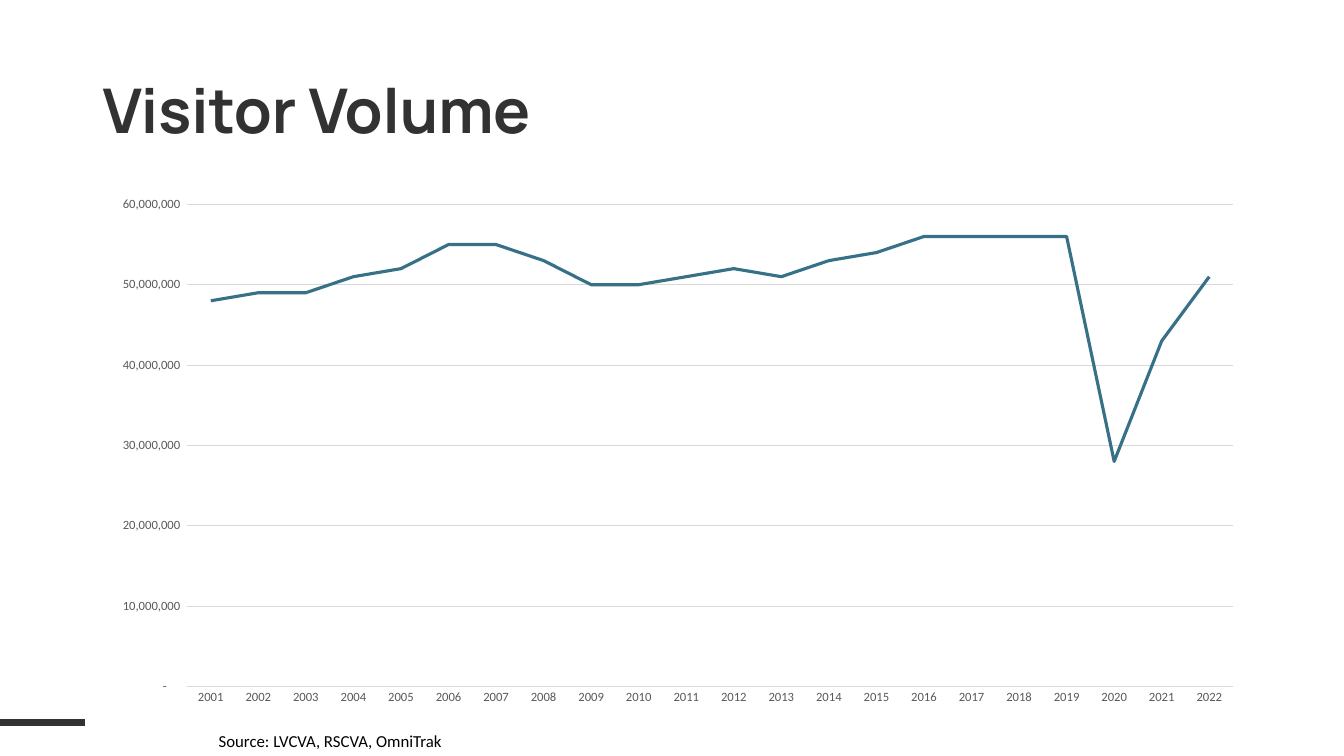
from lxml.etree import SubElement
from pptx import Presentation
from pptx.chart.data import CategoryChartData
from pptx.dml.color import RGBColor
from pptx.enum.chart import XL_CHART_TYPE as ChartType, XL_TICK_MARK as TickMark
from pptx.enum.shapes import MSO_CONNECTOR as Connector
from pptx.enum.text import MSO_ANCHOR as Anchor, MSO_AUTO_SIZE as AutoSize
from pptx.oxml.ns import qn
from pptx.util import Inches, Pt

CHARCOAL = RGBColor(0x32, 0x32, 0x32)
BLACK = RGBColor(0x00, 0x00, 0x00)
AXIS_GREY = RGBColor(0x59, 0x59, 0x59)
GRID_GREY = RGBColor(0xD9, 0xD9, 0xD9)
TEAL = RGBColor(0x37, 0x71, 0x87)

YEARS = range(2001, 2023)
VISITOR_MILLIONS = [48, 49, 49, 51, 52, 55, 55, 53, 50, 50, 51,
                    52, 51, 53, 54, 56, 56, 56, 56, 28, 43, 51]
COUNT_FORMAT = r'_(* #,##0_);_(* \(#,##0\);_(* "-"??_);_('


def style_font(font, name, size, color, bold=False):
    font.name = name
    font.size = Pt(size)
    font.color.rgb = color
    font.bold = bold


def style_line(line, color, width):
    line.color.rgb = color
    line.width = Pt(width)


def add_text(slide, text, left, top, width, height):
    box = slide.shapes.add_textbox(
        Inches(left), Inches(top), Inches(width), Inches(height))
    box.text_frame.text = text
    return box.text_frame, box.text_frame.paragraphs[0]


def add_title(slide):
    frame, title = add_text(slide, "Visitor Volume", 0.92, 0.4, 11.5, 1.45)
    frame.word_wrap = True
    frame.vertical_anchor = Anchor.MIDDLE
    title.line_spacing = 0.9
    title.space_after = Pt(6)
    style_font(title.font, "Manrope", 44, CHARCOAL, bold=True)


def add_source(slide):
    frame, source = add_text(
        slide, "Source: LVCVA, RSCVA, OmniTrak", 2.07, 7.2, 2.44, 0.3)
    frame.word_wrap = False
    frame.auto_size = AutoSize.SHAPE_TO_FIT_TEXT
    style_font(source.font, "Calibri", 12, BLACK)


def add_accent(slide):
    accent = slide.shapes.add_connector(
        Connector.STRAIGHT, Inches(-0.01), Inches(7.17), Inches(0.84), Inches(7.17))
    style_line(accent.line, CHARCOAL, 5)
    SubElement(accent.element.spPr, qn("a:effectLst"))


def style_axis(axis):
    axis.major_tick_mark = TickMark.NONE
    axis.minor_tick_mark = TickMark.NONE
    style_font(axis.tick_labels.font, "Calibri", 9, AXIS_GREY)


def add_visitor_chart(slide):
    data = CategoryChartData(number_format=COUNT_FORMAT)
    data.categories = [str(year) for year in YEARS]
    data.add_series("Series 1", [value * 1_000_000 for value in VISITOR_MILLIONS])
    chart = slide.shapes.add_chart(
        ChartType.LINE, Inches(0.96), Inches(1.85),
        Inches(11.5), Inches(5.25), data).chart
    style_font(chart.font, "Calibri", 10, BLACK)
    chart.has_legend = False
    chart.has_title = False

    years, visitors = chart.category_axis, chart.value_axis
    style_axis(years)
    style_axis(visitors)
    style_line(years.format.line, GRID_GREY, 0.75)
    visitors.format.line.fill.background()
    visitors.minimum_scale = 0
    visitors.maximum_scale = 60_000_000
    visitors.major_unit = 10_000_000
    visitors.has_major_gridlines = True
    style_line(visitors.major_gridlines.format.line, GRID_GREY, 0.75)
    visitors.tick_labels.number_format = COUNT_FORMAT
    visitors.tick_labels.number_format_is_linked = False

    plot = chart.plots[0]
    plot.vary_by_categories = False
    volume = plot.series[0]
    volume.smooth = False
    style_line(volume.format.line, TEAL, 2.25)


def main():
    deck = Presentation()
    deck.slide_width = Inches(13.33)
    deck.slide_height = Inches(7.5)
    slide = deck.slides.add_slide(deck.slide_layouts[6])
    add_accent(slide)
    add_title(slide)
    add_source(slide)
    add_visitor_chart(slide)
    deck.save("out.pptx")


if __name__ == "__main__":
    main()
